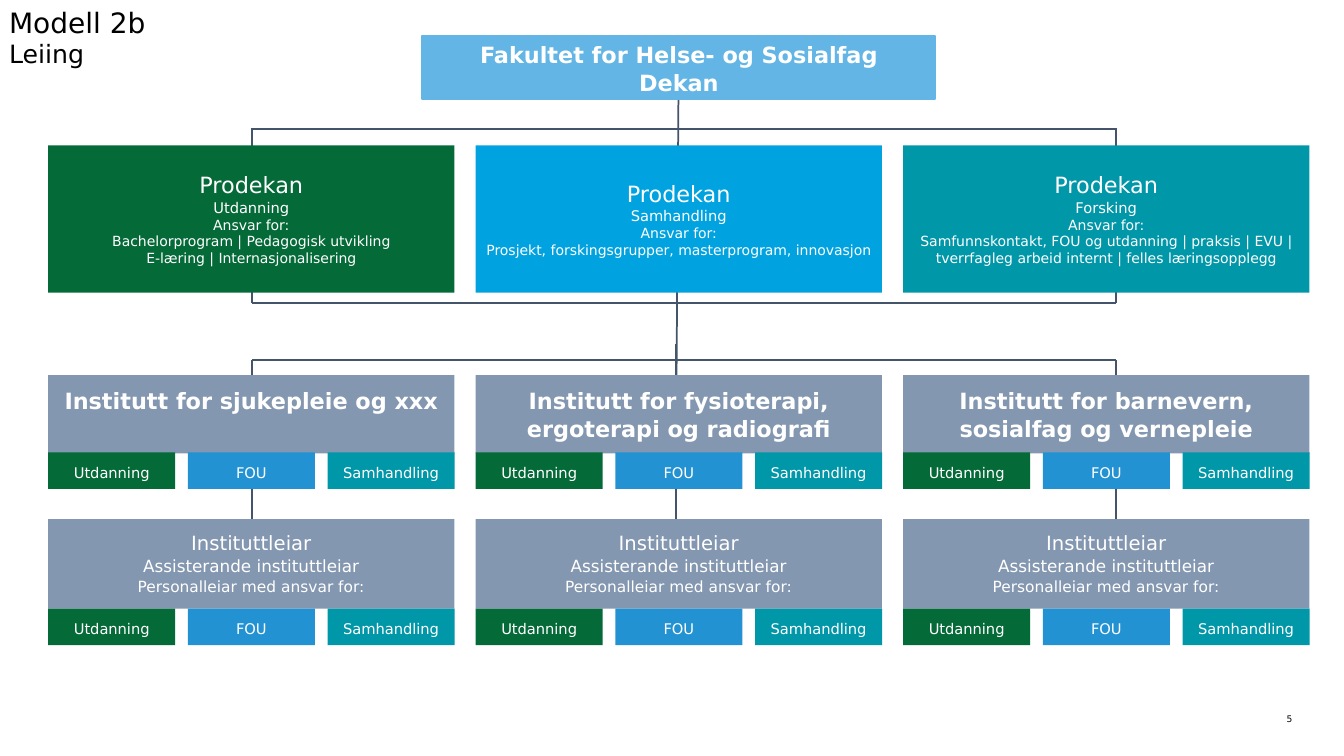
"""Build the organisation chart for Modell 2b, Leiing."""
from dataclasses import dataclass

from lxml import etree
from pptx import Presentation
from pptx.dml.color import RGBColor
from pptx.enum.shapes import MSO_CONNECTOR, MSO_SHAPE
from pptx.enum.text import MSO_ANCHOR, PP_ALIGN
from pptx.oxml.ns import qn
from pptx.util import Pt

RECT = MSO_SHAPE.RECTANGLE
STRAIGHT = MSO_CONNECTOR.STRAIGHT
TOP, MIDDLE = MSO_ANCHOR.TOP, MSO_ANCHOR.MIDDLE
LEFT, CENTER, RIGHT = PP_ALIGN.LEFT, PP_ALIGN.CENTER, PP_ALIGN.RIGHT


@dataclass(frozen=True)
class Theme:
    font: str = "DejaVu Sans"
    black: str = "000000"
    white: str = "FFFFFF"
    line: str = "44546A"
    dean: str = "62B5E5"
    education: str = "046A38"
    cooperation: str = "00A3E0"
    research: str = "0097A9"
    fou: str = "2392D2"
    institute: str = "8497B0"
    title: float = 20
    subtitle: float = 18
    heading: float = 16
    leader: float = 14
    assistant: float = 12
    staff: float = 11
    label: float = 10.5
    detail: float = 10
    number: float = 6.5


class Chart:
    def __init__(self, slide, theme):
        self.s = slide
        self.theme = theme

    def set_text(self, sp, lines, color, align, anchor=TOP, inset=0.0, spacing=1.0, bold=False):
        tf = sp.text_frame
        tf.word_wrap = True
        tf.vertical_anchor = anchor
        tf.margin_left = tf.margin_right = tf.margin_top = tf.margin_bottom = Pt(inset)
        for i, (text, size) in enumerate(lines):
            p = tf.add_paragraph() if i else tf.paragraphs[0]
            p.text = text
            p.alignment = align
            p.line_spacing = spacing
            p.font.name = self.theme.font
            p.font.size = Pt(size)
            p.font.bold = bold
            p.font.color.rgb = RGBColor.from_string(color)

    def text(self, x, y, w, h, lines, align=LEFT):
        sp = self.s.shapes.add_textbox(Pt(x), Pt(y), Pt(w), Pt(h))
        self.set_text(sp, lines, self.theme.black, align)

    def box(self, x, y, w, h, fill, lines, anchor=TOP, spacing=1.06, bold=False):
        sp = self.s.shapes.add_shape(RECT, Pt(x), Pt(y), Pt(w), Pt(h))
        sp.shadow.inherit = False
        sp.fill.solid()
        sp.fill.fore_color.rgb = RGBColor.from_string(fill)
        sp.line.fill.background()
        self.set_text(sp, lines, self.theme.white, CENTER, anchor, 7.2, spacing, bold)
        return sp

    def outline(self, sp, color, width):
        sp.line.color.rgb = RGBColor.from_string(color)
        sp.line.width = Pt(width)

    def line(self, x1, y1, x2, y2, width):
        cx = self.s.shapes.add_connector(STRAIGHT, Pt(x1), Pt(y1), Pt(x2), Pt(y2))
        self.outline(cx, self.theme.line, width)
        etree.SubElement(cx._element.spPr, qn("a:effectLst"))

    def areas(self, x, y):
        t = self.theme
        names = (("Utdanning", t.education), ("FOU", t.fou), ("Samhandling", t.research))
        for i, (name, fill) in enumerate(names):
            self.box(x + i * 99.8, y, 90.8, 26.1, fill, [(name, t.label)])


def main():
    prs = Presentation()
    prs.slide_width, prs.slide_height = Pt(960), Pt(540)
    t = Theme()
    chart = Chart(prs.slides.add_slide(prs.slide_layouts[6]), t)

    left, middle, right = 180, 483.1, 797
    for x, width in ((left, 1.25), (right, 1.5)):
        chart.line(x, 91.5, x, 216.5, width)
        chart.line(x, 257, x, 404, width)
    for y in (92.2, 216.7, 257):
        chart.line(left, y, right, y, 1.5)
    chart.line(middle, 245.5, middle, 406.8, 1.25)
    chart.line(484.6, 71.3, middle, 293.8, 1.25)

    chart.text(6.5, 3.6, 886, 54.7, [("Modell 2b", t.title), ("Leiing", t.subtitle)])
    dean = chart.box(301.7, 25.5, 366.5, 45.5, t.dean,
                     [("Fakultet for Helse- og Sosialfag", t.heading), ("Dekan", t.heading)],
                     MIDDLE, bold=True)
    chart.outline(dean, t.dean, 1.5)

    columns = (
        (t.education, "Utdanning",
         ("Bachelorprogram | Pedagogisk utvikling", "E-læring | Internasjonalisering"),
         "Institutt for sjukepleie og xxx"),
        (t.cooperation, "Samhandling",
         ("Prosjekt, forskingsgrupper, masterprogram, innovasjon",),
         "Institutt for fysioterapi, ergoterapi og radiografi"),
        (t.research, "Forsking",
         ("Samfunnskontakt, FOU og utdanning | praksis | EVU | "
          "tverrfagleg arbeid internt | felles læringsopplegg",),
         "Institutt for barnevern, sosialfag og vernepleie"),
    )
    leaders = [("Instituttleiar", t.leader), ("Assisterande instituttleiar", t.assistant),
               ("Personalleiar med ansvar for:", t.staff)]
    col_w = 290.2
    for i, (fill, field, duties, institute) in enumerate(columns):
        x = 34.4 + i * 305.35
        details = [(text, t.detail) for text in ("Ansvar for:", *duties)]
        chart.box(x, 103.9, col_w, 105.1, fill,
                  [("Prodekan", t.heading), (field, t.label), *details], MIDDLE, 1.0)
        chart.box(x, 268, col_w, 55.8, t.institute, [(institute, t.heading)], bold=True)
        chart.areas(x, 323.2)
        chart.box(x, 370.9, col_w, 63.9, t.institute, leaders)
        chart.areas(x, 434.8)

    chart.text(898.6, 509.8, 24.5, 7.9, [("5", t.number)], RIGHT)
    prs.save("out.pptx")


if __name__ == "__main__":
    main()
